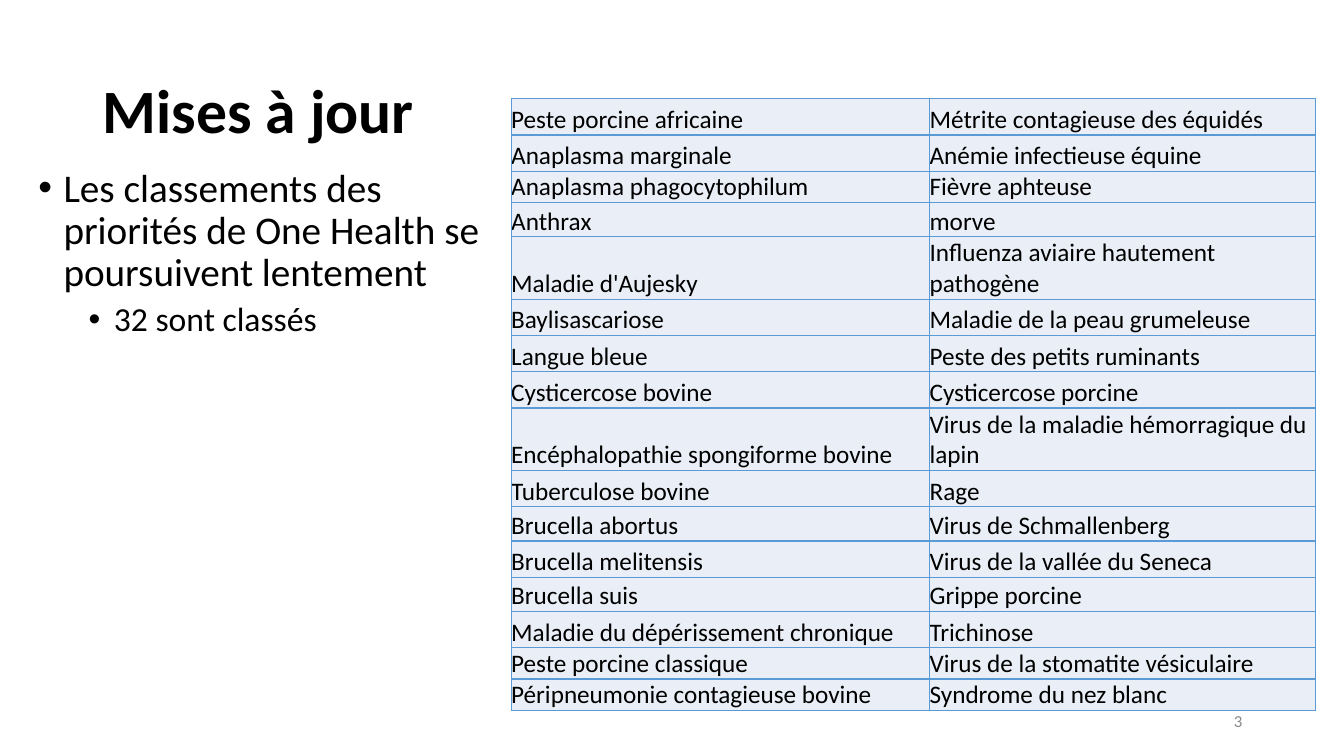
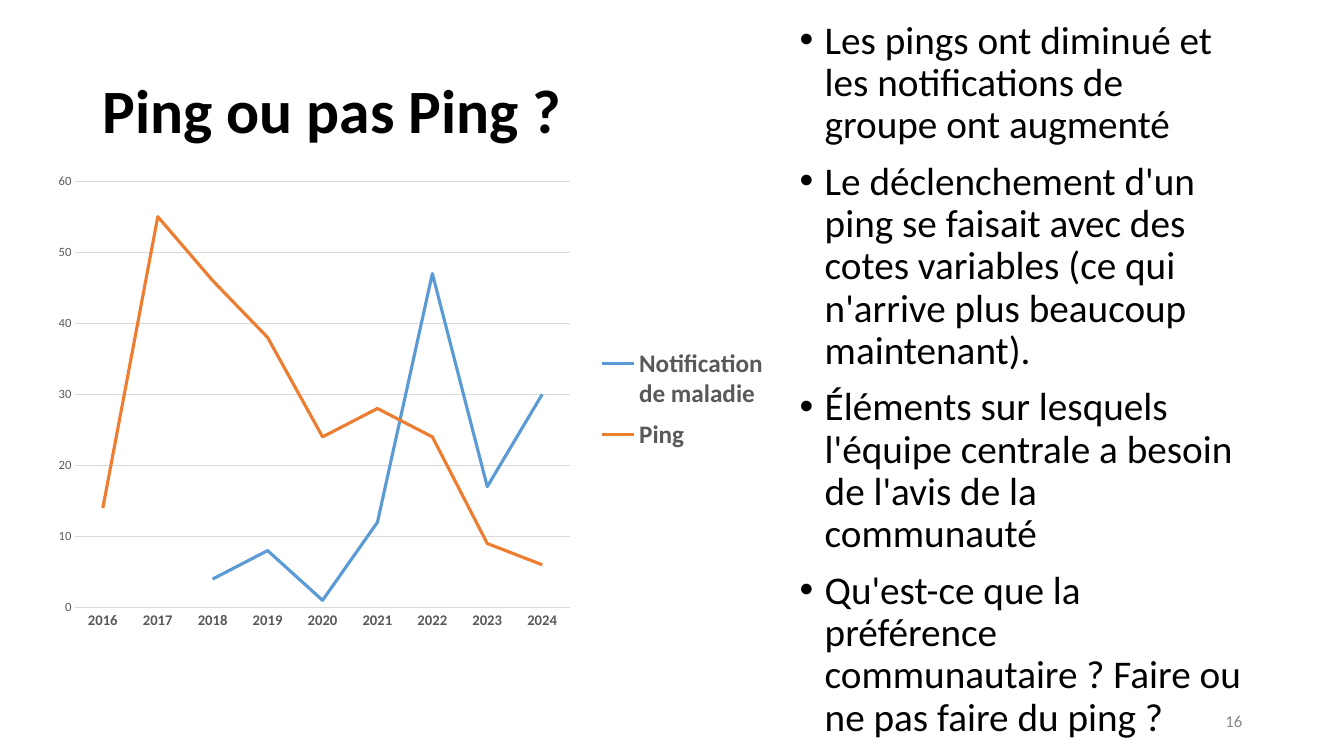
import pptx
import pptx.util
import pptx.dml.color
import pptx.chart.data
import pptx.enum.chart
import pptx.enum.text
import pptx.oxml
import pptx.oxml.ns
from dataclasses import dataclass

PX = 9144  # EMU in one px, 100 px to the inch
ALIGN = pptx.enum.text.PP_ALIGN
ANCHOR = pptx.enum.text.MSO_ANCHOR


@dataclass(frozen=True)
class Theme:
    font: str = "Calibri"
    ink: str = "000000"
    gray: str = "898989"
    label: str = "595959"
    grid: str = "D9D9D9"
    blue: str = "5B9BD5"
    orange: str = "ED7D31"
    pale: str = "EAEFF7"
    white: str = "FFFFFF"
    title: int = 44
    body: tuple = (28, 24)  # size by bullet level
    cell: int = 18
    foot: int = 12


T = Theme()

# Boxes: left, top, width, height in px
TITLE = (92, 40, 1150, 145)
FOOT = (942, 695, 300, 40)

PAIRS = [  # left cell, right cell, row height in px
    ("Peste porcine africaine", "Métrite contagieuse des équidés", 36),
    ("Anaplasma marginale", "Anémie infectieuse équine", 36),
    ("Anaplasma phagocytophilum", "Fièvre aphteuse", 31),
    ("Anthrax", "morve", 34),
    ("Maladie d'Aujesky", "Influenza aviaire hautement pathogène", 62),
    ("Baylisascariose", "Maladie de la peau grumeleuse", 36),
    ("Langue bleue", "Peste des petits ruminants", 36),
    ("Cysticercose bovine", "Cysticercose porcine", 36),
    ("Encéphalopathie spongiforme bovine",
     "Virus de la maladie hémorragique du lapin", 62),
    ("Tuberculose bovine", "Rage", 36),
    ("Brucella abortus", "Virus de Schmallenberg", 34),
    ("Brucella melitensis", "Virus de la vallée du Seneca", 36),
    ("Brucella suis", "Grippe porcine", 34),
    ("Maladie du dépérissement chronique", "Trichinose", 36),
    ("Peste porcine classique", "Virus de la stomatite vésiculaire", 31),
    ("Péripneumonie contagieuse bovine", "Syndrome du nez blanc", 31),
]
YEARS = [str(year) for year in range(2016, 2025)]
LINES = [
    ("Notification de maladie", [None, None, 4, 8, 1, 12, 47, 17, 30], T.blue),
    ("Ping", [14, 55, 46, 38, 24, 28, 24, 9, 6], T.orange),
]


# Shared helpers
def rgb(code):
    return pptx.dml.color.RGBColor.from_string(code)


def emu(box):
    return [n * PX for n in box]


def place(shape, box):
    shape.left, shape.top, shape.width, shape.height = emu(box)


def style(font, size, color=T.ink, bold=False):
    font.name = T.font
    font.size = pptx.util.Pt(size)
    font.bold = bold
    font.color.rgb = rgb(color)


def node(parent, xml, at=None):
    uri = pptx.oxml.ns.nsdecls("a", "c")
    tag, rest = xml.split(" ", 1)
    item = pptx.oxml.parse_xml(f"<{tag} {uri} {rest}")
    parent.insert(len(parent) if at is None else at, item)


def write(frame, text, size, color=T.ink, bold=False, align=ALIGN.LEFT,
          level=None, space=0, lines=None):
    """Add one paragraph; a level makes it a bullet."""
    par = frame.paragraphs[0]
    if par.runs:
        par = frame.add_paragraph()
    else:
        space = 0
    if level is not None:
        par.level = level
        prop = par._p.get_or_add_pPr()
        prop.set("marL", str((25 + 50 * level) * PX))
        prop.set("indent", str(-25 * PX))
        node(prop, 'a:buFont typeface="Arial"/>')
        node(prop, 'a:buChar char="•"/>')
    par.alignment = align
    par.space_before = pptx.util.Pt(space)
    if lines:
        par.line_spacing = lines
    run = par.add_run()
    run.text = text
    style(run.font, size, color, bold)


def setup(frame, anchor):
    frame.word_wrap = True
    frame.auto_size = pptx.enum.text.MSO_AUTO_SIZE.NONE
    frame.vertical_anchor = anchor


# Regions
def head(slide, box, text):
    shape = slide.shapes.title
    place(shape, box)
    setup(shape.text_frame, ANCHOR.MIDDLE)
    write(shape.text_frame, text, T.title, bold=True, lines=0.9)


def points(slide, box, items):
    shape = slide.placeholders[1]
    place(shape, box)
    setup(shape.text_frame, ANCHOR.TOP)
    for level, text in items:
        write(shape.text_frame, text, T.body[level], level=level,
              space=10 - 5 * level, lines=0.9)


def foot(slide, box, text):
    frame = slide.shapes.add_textbox(*emu(box)).text_frame
    setup(frame, ANCHOR.MIDDLE)
    write(frame, text, T.foot, T.gray, align=ALIGN.RIGHT)


def fill(cell, text):
    cell.margin_left = cell.margin_right = 0
    cell.margin_top = cell.margin_bottom = 0
    cell.vertical_anchor = ANCHOR.BOTTOM
    prop = cell._tc.get_or_add_tcPr()
    for side in "LRTB":
        node(prop, f'a:ln{side} w="12700"><a:solidFill><a:srgbClr '
                   f'val="{T.blue}"/></a:solidFill></a:ln{side}>')
    cell.fill.solid()
    cell.fill.fore_color.rgb = rgb(T.pale)
    write(cell.text_frame, text, T.cell)


def grid(slide, box, pairs):
    table = slide.shapes.add_table(len(pairs), 2, *emu(box)).table
    table.first_row = table.horz_banding = False
    wide = round(box[2] * 0.52)
    table.columns[0].width = wide * PX
    table.columns[1].width = (box[2] - wide) * PX
    for row, (left, right, tall) in enumerate(pairs):
        table.rows[row].height = tall * PX
        fill(table.cell(row, 0), left)
        fill(table.cell(row, 1), right)


def layout(parent, at, x, y, w, h, inner=False):
    """Fix a chart part at fractions of the chart's box."""
    for old in parent.findall(pptx.oxml.ns.qn("c:layout")):
        parent.remove(old)
    kind = '<c:layoutTarget val="inner"/>' if inner else ""
    size = "".join(f'<c:{k} val="{v}"/>' for k, v in zip("xywh", (x, y, w, h)))
    node(parent, f'c:layout ><c:manualLayout>{kind}<c:xMode val="edge"/>'
                 f'<c:yMode val="edge"/>{size}</c:manualLayout></c:layout>', at)


def stroke(line, color, width):
    line.color.rgb = rgb(color)
    line.width = pptx.util.Pt(width)


def graph(slide, box, cats, lines):
    enum = pptx.enum.chart
    data = pptx.chart.data.CategoryChartData()
    data.categories = cats
    for name, vals, _ in lines:
        data.add_series(name, vals)
    chart = slide.shapes.add_chart(
        enum.XL_CHART_TYPE.LINE, *emu(box), data).chart
    chart.has_title = False
    style(chart.font, 10)

    # Series
    plot = chart.plots[0]
    plot.vary_by_categories = False
    for series, (_, _, color) in zip(plot.series, lines):
        series.smooth = False
        stroke(series.format.line, color, 2.25)

    # Axes
    base, side = chart.category_axis, chart.value_axis
    for axis, size, bold in ((base, 10.5, True), (side, 9, False)):
        axis.major_tick_mark = axis.minor_tick_mark = enum.XL_TICK_MARK.NONE
        style(axis.tick_labels.font, size, T.label, bold)
    stroke(base.format.line, T.grid, 0.75)
    side.format.line.fill.background()
    side.minimum_scale, side.maximum_scale, side.major_unit = 0, 60, 10
    side.has_major_gridlines = True
    stroke(side.major_gridlines.format.line, T.grid, 0.75)

    # Legend and plot area
    chart.has_legend = True
    key = chart.legend
    key.position = enum.XL_LEGEND_POSITION.RIGHT
    key.include_in_layout = False
    style(key.font, 18, T.label, True)
    layout(key._element, 1, 0.75, 0.37, 0.25, 0.26)
    area = chart._chartSpace.chart.plotArea
    layout(area, 0, 0.04, 0.04, 0.68, 0.9, inner=True)


# Slides
def page(deck, title, number):
    slide = deck.slides.add_slide(deck.slide_layouts[1])
    slide.background.fill.solid()
    slide.background.fill.fore_color.rgb = rgb(T.white)
    head(slide, TITLE, title)
    foot(slide, FOOT, number)
    return slide


def updates(deck):
    slide = page(deck, "Mises à jour", "3")
    points(slide, (28, 162, 479, 187), [
        (0, "Les classements des priorités de One Health se poursuivent "
            "lentement"),
        (1, "32 sont classés"),
    ])
    grid(slide, (507, 98, 798, 607), PAIRS)


def pings(deck):
    slide = page(deck, "Ping ou pas Ping ?", "16")
    points(slide, (783, 15, 459, 581), [
        (0, "Les pings ont diminué et les notifications de groupe ont "
            "augmenté"),
        (0, "Le déclenchement d'un ping se faisait avec des cotes variables "
            "(ce qui n'arrive plus beaucoup maintenant)."),
        (0, "Éléments sur lesquels l'équipe centrale a besoin de l'avis de "
            "la communauté"),
        (0, "Qu'est-ce que la préférence communautaire ? Faire ou ne pas "
            "faire du ping ?"),
    ])
    graph(slide, (46, 161, 721, 470), YEARS, LINES)


def main():
    deck = pptx.Presentation()
    deck.slide_width, deck.slide_height = emu((1333, 750))
    updates(deck)
    pings(deck)
    deck.save("out.pptx")


if __name__ == "__main__":
    main()
